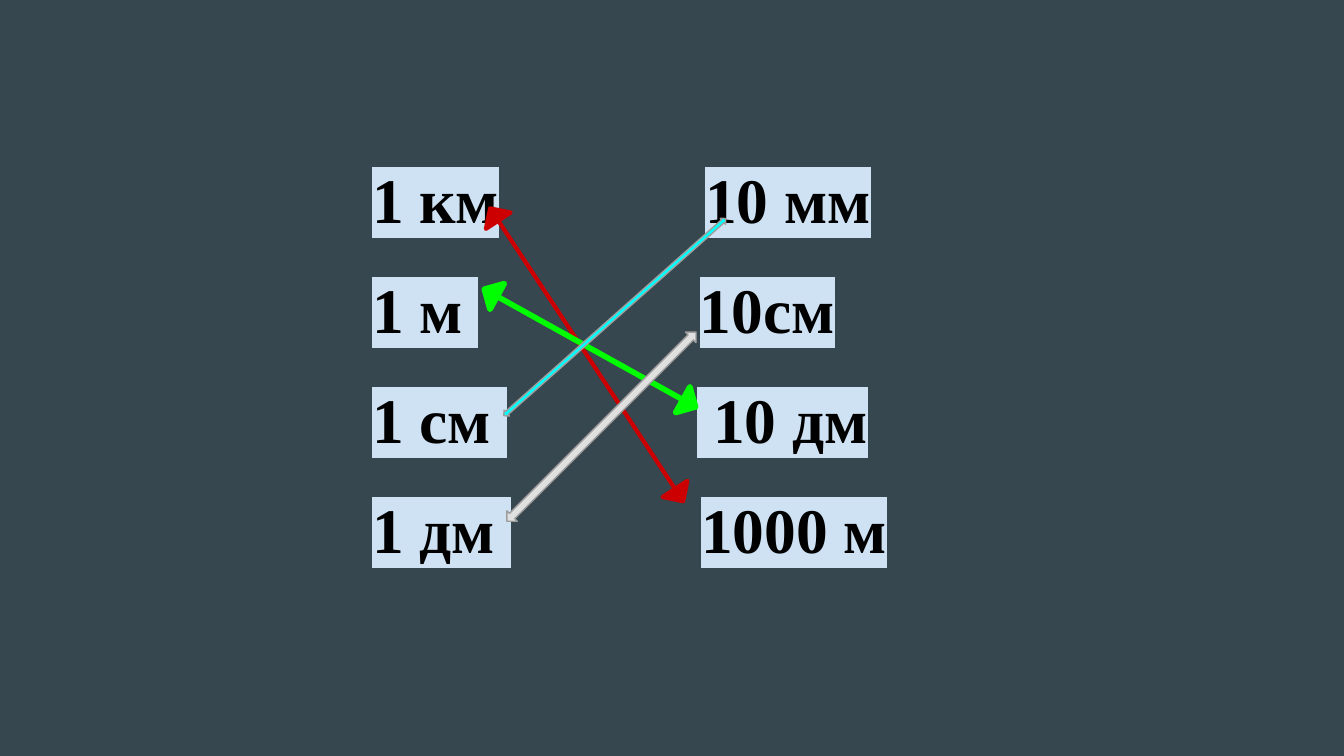
from lxml import etree
from pptx import Presentation
from pptx import util as u
from pptx.dml.color import RGBColor
from pptx.enum import shapes, text
from pptx.oxml import ns

FONT = "Times New Roman"
HIGHLIGHT = "CFE2F3"


def color(hex_value):
    return RGBColor.from_string(hex_value)


def add_text(paragraph, words, size=34, ink="000000", bold=True, highlight=None):
    run = paragraph.add_run()
    run.text = words
    font = run.font
    font.size, font.bold = u.Pt(size), bold
    font.color.rgb = color(ink)
    if highlight:
        mark = etree.Element(ns.qn("a:highlight"))
        etree.SubElement(mark, ns.qn("a:srgbClr"), val=highlight)
        run._r.rPr.find(ns.qn("a:solidFill")).addnext(mark)
    font.name = FONT


class MatchingSlide:
    def __init__(self, deck, background):
        self.slide = deck.slides.add_slide(deck.slide_layouts[6])
        fill = self.slide.background.fill
        fill.solid()
        fill.fore_color.rgb = color(background)

    def pairs(self, rows, left, top, width, height):
        box = self.slide.shapes.add_textbox(*map(u.Inches, (left, top, width, height)))
        frame = box.text_frame
        frame.word_wrap = True
        frame.vertical_anchor = text.MSO_ANCHOR.TOP
        frame.margin_left = frame.margin_right = u.Inches(0.1)
        frame.margin_top = frame.margin_bottom = u.Inches(0.1)
        for index, (measure, answer, answer_tab) in enumerate(rows):
            row = frame.add_paragraph() if index else frame.paragraphs[0]
            row.line_spacing = 1.15
            row.space_before = u.Pt(12 if index else 0)
            tabs = etree.SubElement(row._p.get_or_add_pPr(), ns.qn("a:tabLst"))
            etree.SubElement(tabs, ns.qn("a:tab"),
                             pos=str(u.Inches(answer_tab)), algn="l")
            add_text(row, measure, highlight=HIGHLIGHT)
            add_text(row, "\t")
            add_text(row, answer, highlight=HIGHLIGHT)

    def arrow(self, left, top, width, height, angle, shaft, fill, line, weight):
        arrow = self.slide.shapes.add_shape(
            shapes.MSO_SHAPE.LEFT_RIGHT_ARROW,
            *map(u.Inches, (left, top, width, height)))
        arrow.adjustments[0], arrow.adjustments[1] = shaft, 0.5
        arrow.rotation = angle
        arrow.shadow.inherit = False
        arrow.fill.solid()
        arrow.fill.fore_color.rgb = color(fill)
        arrow.line.color.rgb = color(line)
        arrow.line.width = u.Pt(weight)


def main():
    deck = Presentation()
    # Widescreen, 16:9
    deck.slide_width, deck.slide_height = u.Inches(10), u.Inches(10 * 9 / 16)
    matching = MatchingSlide(deck, "37474F")

    # Units on the left, their equals on the right, and where these start
    matching.pairs([("1 км", "10 мм", 2.48), ("1 м ", "10см", 2.44),
                    ("1 см ", " 10 дм", 2.42), ("1 дм ", "1000 м", 2.45)],
                   2.67, 1.01, 4.47, 3.25)

    # Arrows joining equal lengths: km-m, m-dm, cm-mm, dm-cm
    matching.arrow(3.06, 2.53, 2.61, 0.22, 56.6, 0, "CC0000", "CC0000", 2.25)
    matching.arrow(3.49, 2.48, 1.8, 0.22, 29.1, 0, "00FF00", "00FF00", 3)
    matching.arrow(3.47, 2.33, 2.21, 0.06, 318.4, 0.5, "00FFFF", "9E9E9E", 0.75)
    matching.arrow(3.48, 3.12, 1.99, 0.11, 315, 0.5, "E0E0E0", "9E9E9E", 0.75)

    deck.save("out.pptx")


if __name__ == "__main__":
    main()
